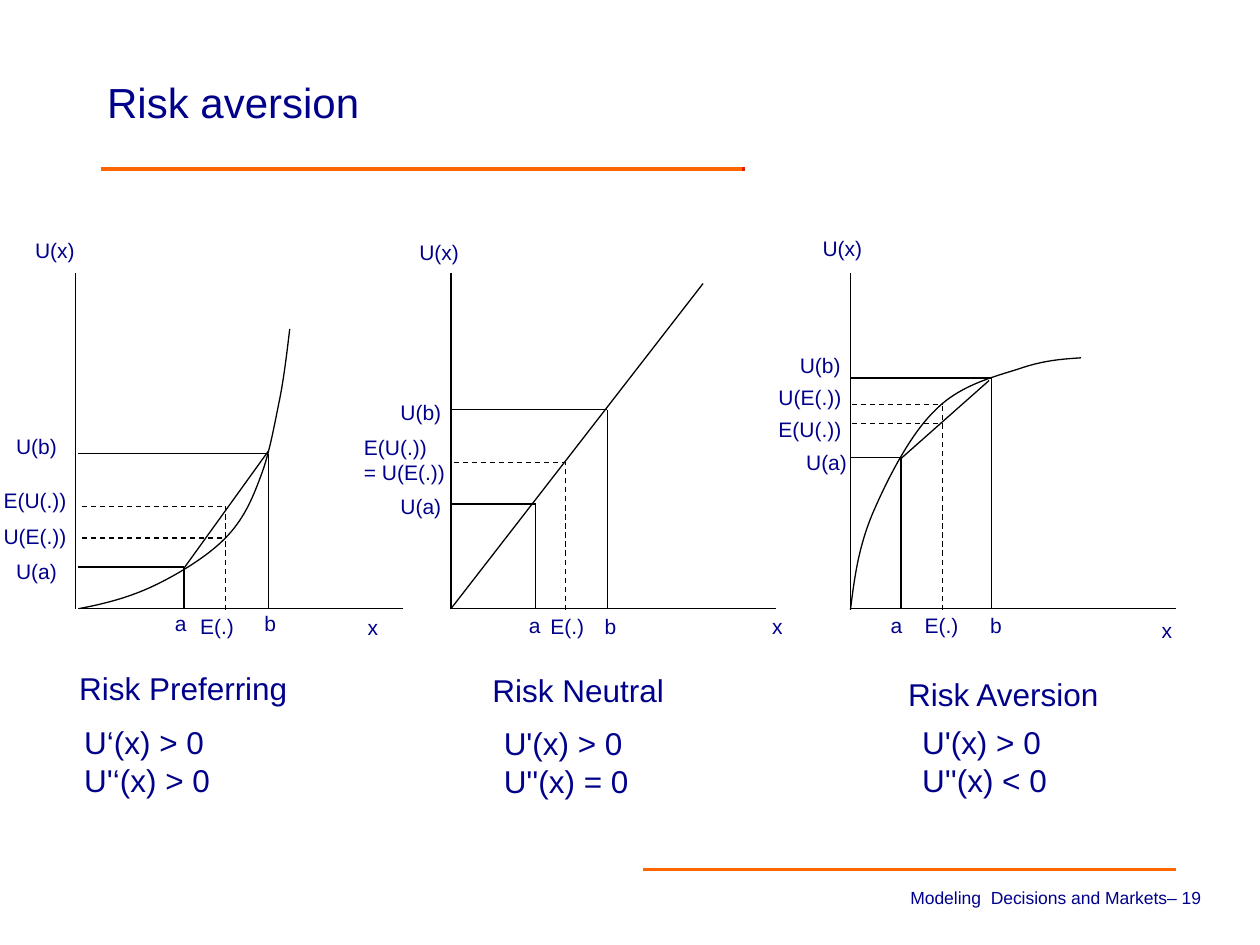
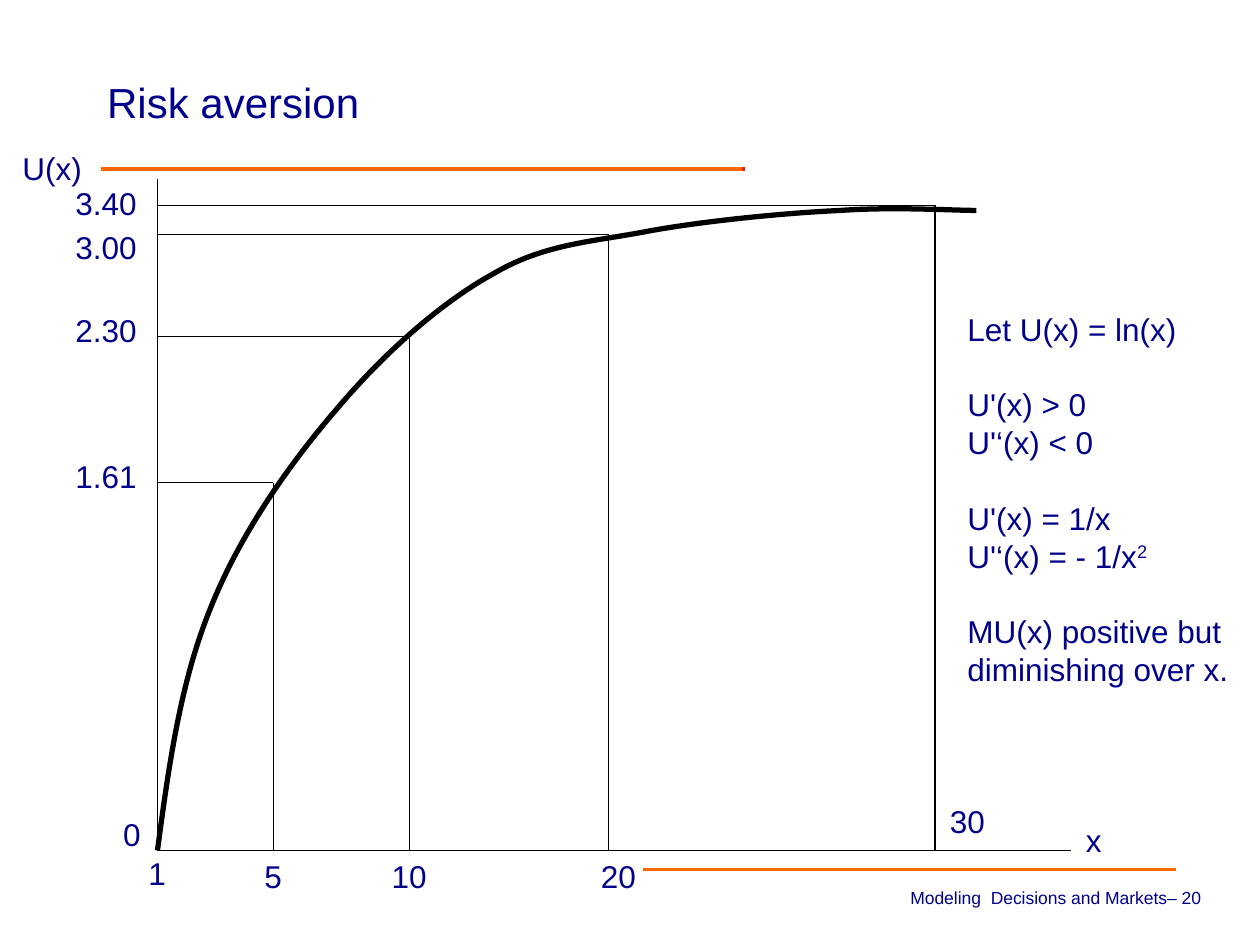
"""Two slides on risk aversion: utility curve panels and a logarithmic utility plot."""
from lxml.etree import SubElement
from pptx import Presentation
from pptx.dml.color import RGBColor
from pptx.enum.dml import MSO_LINE
from pptx.enum.text import MSO_ANCHOR as ANCHOR, MSO_AUTO_SIZE as AUTO, PP_ALIGN as ALIGN
from pptx.oxml.ns import qn
from pptx.util import Cm, Pt

GRID = 2.54
NAVY, BLACK, ORANGE, RED = "00008A", "000000", "FF6600", "E61E00"
FONT = "Arial"
TOP, BASE, AXIS_LENGTH = 2.17, 4.83, 2.58
WIDTHS = {"U(x)": 0.52, "U(a)": 0.53, "U(b)": 0.53, "E(.)": 0.47, "x": 0.29,
          "a": 0.3, "b": 0.3, "E(U(.))": 0.71, "U(E(.))": 0.71}

PANELS = [
    dict(axis=0.6, start=0.62, dash_start=0.65,
         curve=[(0.63, 4.83), (0.84, 4.79), (1.03, 4.74), (1.22, 4.65),
                (1.41, 4.56), (1.64, 4.42), (1.78, 4.28),
                (1.93, 4.13), (2, 3.97), (2.07, 3.78),
                (2.14, 3.6), (2.18, 3.36), (2.22, 3.17),
                (2.26, 2.97), (2.29, 2.69), (2.3, 2.61)],
         guides=[(1.46, 4.5), (2.13, 3.6)],
         chord=[(1.46, 4.51), (2.13, 3.58)], expected=1.79, levels=[4.02, 4.27],
         labels=[("U(x)", 0.18, 1.84), ("x", 2.82, 4.83), ("a", 1.29, 4.8),
                 ("b", 2, 4.8), ("E(.)", 1.49, 4.82), ("U(a)", 0.03, 4.38),
                 ("U(b)", 0.03, 3.39), ("E(U(.))", -0.07, 3.82),
                 ("U(E(.))", -0.07, 4.11)],
         name=("Risk Preferring", 0.53, 5.26, 2.73),
         signs=(["U‘(x) > 0", "U'‘(x) > 0"], 0.57, 5.69)),
    dict(axis=3.58, start=3.58, dash_start=3.6,
         curve=[(3.58, 4.83), (5.58, 2.25)],
         guides=[(4.25, 4), (4.82, 3.25)],
         chord=None, expected=4.49, levels=[3.67],
         labels=[("U(x)", 3.23, 1.85), ("x", 6.03, 4.82), ("a", 4.1, 4.81),
                 ("b", 4.7, 4.82), ("E(.)", 4.27, 4.82), ("U(a)", 3.08, 3.87),
                 ("U(b)", 3.08, 3.12)],
         name=("Risk Neutral", 3.81, 5.28, 2.09),
         signs=(["U'(x) > 0", "U''(x) = 0"], 3.9, 5.7)),
    dict(axis=6.75, start=6.75, dash_start=6.76,
         curve=[(6.75, 4.84), (6.78, 4.6), (6.81, 4.36), (6.92, 4.09),
                (7.03, 3.83), (7.22, 3.45), (7.42, 3.26),
                (7.61, 3.06), (7.89, 2.99), (8.08, 2.93),
                (8.28, 2.86), (8.43, 2.85), (8.58, 2.84)],
         guides=[(7.15, 3.63), (7.87, 3)],
         chord=[(7.15, 3.64), (7.85, 3.02)], expected=7.48, levels=[3.21, 3.36],
         labels=[("U(x)", 6.43, 1.82), ("x", 9.12, 4.85), ("a", 6.97, 4.81),
                 ("b", 7.76, 4.81), ("E(.)", 7.24, 4.81), ("U(a)", 6.3, 3.52),
                 ("U(b)", 6.25, 2.75), ("E(U(.))", 6.08, 3.26),
                 ("U(E(.))", 6.08, 3)],
         name=("Risk Aversion", 7.11, 5.31, 1.73),
         signs=(["U'(x) > 0", "U''(x) < 0"], 7.22, 5.69)),
]

LOG_CURVE = [(1.25, 6.75), (1.34, 6.08), (1.43, 5.42), (1.67, 4.83),
             (1.9, 4.25), (2.29, 3.69), (2.67, 3.25),
             (3.04, 2.81), (3.5, 2.4), (3.92, 2.17),
             (4.33, 1.93), (4.71, 1.92), (5.17, 1.83),
             (5.62, 1.75), (6.24, 1.69), (6.67, 1.67),
             (7.1, 1.64), (7.56, 1.67), (7.75, 1.67)]
LOG_GUIDES = [(2.17, 3.83), (3.25, 2.67), (4.83, 1.86), (7.42, 1.63)]
LOG_LABELS = [("x", 8.52, 6.47, 0.33), ("0", 0.88, 6.42, 0.34), ("1", 1.08, 6.73, 0.34),
              ("5", 2, 6.75, 0.34), ("10", 3.01, 6.75, 0.48), ("20", 4.67, 6.75, 0.48),
              ("30", 7.44, 6.32, 0.48), ("1.61", 0.5, 3.58, 0.69),
              ("2.30", 0.5, 2.42, 0.69), ("3.00", 0.5, 1.76, 0.69),
              ("3.40", 0.5, 1.41, 0.69)]
LOG_NOTES = [["Let U(x) = ln(x)"], ["U'(x) > 0", "U'‘(x) < 0"],
             ["U'(x) = 1/x", "U'‘(x) = - 1/x^2"],
             ["MU(x) positive but", "diminishing over x."]]


def cm(units):
    """Turn grid units into a length."""
    return Cm(units * GRID)


def color(value):
    """Turn a hex string into a colour."""
    return RGBColor.from_string(value)


def apply(target, **values):
    """Set several attributes of one object."""
    for key, value in values.items():
        setattr(target, key, value)


def add_run(p, text, size, raised=False):
    """Add a navy run, raised if it is an exponent."""
    r = p.add_run()
    r.text = text
    apply(r.font, name=FONT, size=Pt(size))
    r.font.color.rgb = color(NAVY)
    if raised:
        r._r.get_or_add_rPr().set("baseline", "30000")


def add_text(s, groups, x, y, w, h, size, wrap=False, grow=True, align=ALIGN.LEFT):
    """Add a text box whose groups of lines are set one line apart."""
    tf = s.shapes.add_textbox(cm(x), cm(y), cm(w), cm(h)).text_frame
    apply(tf, word_wrap=wrap, vertical_anchor=ANCHOR.TOP,
          auto_size=AUTO.SHAPE_TO_FIT_TEXT if grow else AUTO.NONE)
    p = None
    for number, group in enumerate(groups):
        for index, line in enumerate(group):
            p = tf.add_paragraph() if p else tf.paragraphs[0]
            p.alignment = align
            if number and not index:
                p.space_before = Pt(size * 1.2)
            base, _, exponent = line.partition("^")
            add_run(p, base, size)
            if exponent:
                add_run(p, exponent, size, raised=True)


def add_line(s, start, end, hue=BLACK, width=0.75, dashed=False):
    """Draw a straight line between two points."""
    c = s.shapes.add_connector(1, cm(start[0]), cm(start[1]), cm(end[0]), cm(end[1]))
    c.line.color.rgb = color(hue)
    c.line.width = Pt(width)
    if dashed:
        c.line.dash_style = MSO_LINE.DASH
    SubElement(c._element.spPr, qn("a:effectLst"))
    return c


def add_guide(s, start, base, point):
    """Drop a point to both axes."""
    x, y = point
    add_line(s, (start, y), point)
    add_line(s, (x, base), point)


def add_curve(s, points, width=0.75):
    """Draw an open chain of cubic curves."""
    first, *rest = [(cm(x), cm(y)) for x, y in points]
    builder = s.shapes.build_freeform(*first)
    builder.add_line_segments(rest, close=False)
    sp = builder.convert_to_shape()
    segments = list(sp._element.iter(qn("a:lnTo")))
    for i in range(0, len(segments), 3):
        outline = segments[i].getparent()
        cubic = SubElement(outline, qn("a:cubicBezTo"))
        for segment in segments[i:i + 3]:
            cubic.append(segment[0])
            outline.remove(segment)
    sp.shadow.inherit = False
    sp.fill.background()
    sp.line.color.rgb = color(BLACK)
    sp.line.width = Pt(width)


def add_rules(s):
    """Draw the coloured rules and hand them to the shared layout."""
    for start, end, hue in [((0.8, 1.34), (5.91, 1.34), ORANGE),
                            ((5.89, 1.34), (5.91, 1.34), RED),
                            ((9.33, 6.9), (5.1, 6.9), ORANGE)]:
        c = add_line(s, start, end, hue, 2)
        s.slide_layout.shapes._spTree.append(c._element)


def add_slide(prs, title, number):
    """Add a slide with its title and footer."""
    s = prs.slides.add_slide(prs.slide_layouts[5])
    sp = s.shapes.title
    apply(sp, left=cm(0.75), top=cm(0.54), width=cm(8.5), height=cm(0.83))
    tf = sp.text_frame
    apply(tf, vertical_anchor=ANCHOR.TOP, auto_size=AUTO.NONE, word_wrap=True)
    p = tf.paragraphs[0]
    apply(p, alignment=ALIGN.LEFT, line_spacing=Pt(30))
    add_run(p, title, 24)
    add_text(s, [[f"Modeling  Decisions and Markets– {number}"]],
             3.89, 6.99, 5.74, 0.34, 10, wrap=True, grow=False, align=ALIGN.RIGHT)
    return s


def add_panel(s, axis, start, dash_start, curve, guides, chord, expected, levels,
              labels, name, signs):
    """Draw one utility diagram with its caption."""
    add_line(s, (axis, TOP), (axis, BASE))
    add_line(s, (start, BASE), (start + AXIS_LENGTH, BASE))
    if len(curve) == 2:
        add_line(s, *curve)
    else:
        add_curve(s, curve)
    for point in guides:
        add_guide(s, start, BASE, point)
    if chord:
        add_line(s, *chord)
    add_line(s, (expected, BASE + 0.01), (expected, min(levels)), dashed=True)
    for level in levels:
        add_line(s, (dash_start, level), (expected, level), dashed=True)
    for text, x, y in labels:
        add_text(s, [[text]], x, y, WIDTHS[text], 0.3, 12)
    text, x, y, w = name
    add_text(s, [[text]], x, y, w, 0.4, 18, wrap=True)
    lines, x, y = signs
    add_text(s, [lines], x, y, 1.2, 0.71, 18)


def add_log_plot(s):
    """Draw the logarithmic utility curve with its notes."""
    axis, base = 1.25, 6.75
    add_line(s, (axis, 1.42), (axis, base))
    add_line(s, (axis, base), (8.5, base))
    add_curve(s, LOG_CURVE, 3)
    for point in LOG_GUIDES:
        add_guide(s, axis, base, point)
    add_text(s, [["U(x)"]], 0.08, 1.13, 1, 0.4, 18, wrap=True)
    for text, x, y, w in LOG_LABELS:
        add_text(s, [[text]], x, y, w, 0.4, 18)
    add_text(s, LOG_NOTES, 7.58, 2.41, 2.31, 3.43, 18)


def main():
    """Build and save both slides."""
    prs = Presentation()
    apply(prs, slide_width=cm(10), slide_height=cm(7.5))
    s = add_slide(prs, "Risk aversion", 19)
    add_rules(s)
    for panel in PANELS:
        add_panel(s, **panel)
    add_text(s, [["E(U(.))", "= U(E(.))"]], 2.79, 3.4, 0.85, 0.51, 12)
    add_log_plot(add_slide(prs, "Risk aversion", 20))
    prs.save("out.pptx")


if __name__ == "__main__":
    main()
